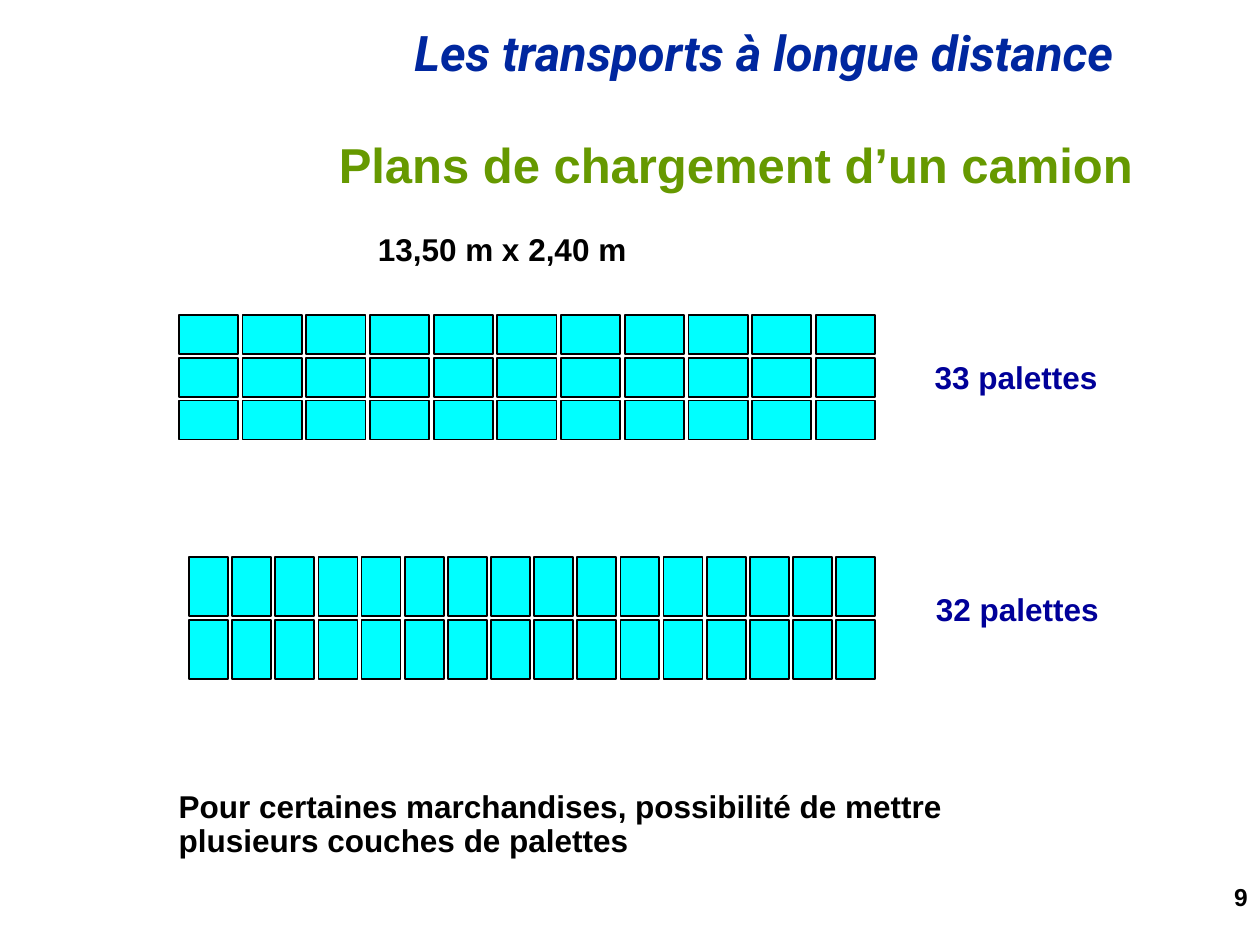
"""Build the slide on truck loading plans, with two pallet layouts."""
from dataclasses import dataclass
from itertools import product

from pptx import Presentation
from pptx.dml.color import RGBColor
from pptx.enum.shapes import MSO_SHAPE
from pptx.enum.text import MSO_ANCHOR, PP_ALIGN
from pptx.util import Pt


@dataclass(frozen=True)
class Theme:
    """Colours, fonts and type sizes of the slide."""
    blue: str = "00279F"
    green: str = "669900"
    navy: str = "000099"
    black: str = "000000"
    cyan: str = "00FFFF"
    font: str = "Arial"
    header_font: str = "Roboto"
    heading: int = 28
    body: int = 18
    small: int = 14


THEME = Theme()
PAGE_SIZE = (720, 540)
PALLET_SIZE = (33.84, 22.32)

TITLE = ("Plans de chargement d’un camion", (84.24, 77.76, 570.24, 36))
HEADER = ("Les transports à longue distance", (229.68, 12.96, 490.32, 37.44))
PAGE_NUMBER = ("9", (558, 502.56, 162, 28.8))
LABELS = [
    ("33 palettes", (527.04, 203.76, 107.28, 26.64), THEME.navy, False),
    ("32 palettes", (527.76, 336.24, 107.28, 26.64), THEME.navy, False),
    ("13,50 m x 2,40 m", (208.8, 130.32, 163.44, 26.64), THEME.black, True),
    ("Pour certaines marchandises, possibilité de mettre plusieurs couches de palettes",
     (95.04, 448.56, 487.44, 46.08), THEME.black, True),
]
LOADING_PLANS = [
    {"rows": 3, "columns": 11, "origin": (102.24, 180), "pitch": (36.4, 24.4), "rotation": 0},
    {"rows": 2, "columns": 16, "origin": (102.24, 324), "pitch": (24.65, 36), "rotation": 270},
]


def write(box, text, color, size, font=THEME.font, italic=False, align=PP_ALIGN.LEFT, wrap=True):
    """Put one formatted paragraph in a text shape."""
    frame = box.text_frame
    frame.text = text
    frame.word_wrap = wrap
    para = frame.paragraphs[0]
    para.alignment = align
    para.line_spacing = 0.9
    span = para.runs[0].font
    span.name, span.size, span.bold, span.italic = font, Pt(size), True, italic
    span.color.rgb = RGBColor.from_string(color)


def add_text(page, text, place, color, size, **style):
    """Add a text box at a place given in points."""
    box = page.shapes.add_textbox(*map(Pt, place))
    write(box, text, color, size, **style)


def add_title(page, text, place):
    """Move and format the title placeholder."""
    title = page.shapes.title
    title.left, title.top, title.width, title.height = map(Pt, place)
    write(title, text, THEME.green, THEME.heading, align=PP_ALIGN.RIGHT)
    title.text_frame.vertical_anchor = MSO_ANCHOR.MIDDLE


def add_pallets(page, rows, columns, origin, pitch, rotation):
    """Lay out a grid of equal pallets."""
    for row, column in product(range(rows), range(columns)):
        left = origin[0] + column * pitch[0]
        top = origin[1] + row * pitch[1]
        pallet = page.shapes.add_shape(MSO_SHAPE.RECTANGLE, Pt(left), Pt(top), *map(Pt, PALLET_SIZE))
        pallet.rotation = rotation
        pallet.shadow.inherit = False
        pallet.fill.solid()
        pallet.fill.fore_color.rgb = RGBColor.from_string(THEME.cyan)
        pallet.line.color.rgb = RGBColor.from_string(THEME.black)
        pallet.line.width = Pt(1)


def main():
    """Assemble and save the deck."""
    deck = Presentation()
    deck.slide_width, deck.slide_height = map(Pt, PAGE_SIZE)
    page = deck.slides.add_slide(deck.slide_layouts[5])
    add_text(page, *HEADER, THEME.blue, THEME.heading, font=THEME.header_font, italic=True)
    add_title(page, *TITLE)
    for plan in LOADING_PLANS:
        add_pallets(page, **plan)
    for text, place, color, wrap in LABELS:
        add_text(page, text, place, color, THEME.body, wrap=wrap)
    add_text(page, *PAGE_NUMBER, THEME.black, THEME.small, align=PP_ALIGN.RIGHT)
    deck.save("out.pptx")


if __name__ == "__main__":
    main()
